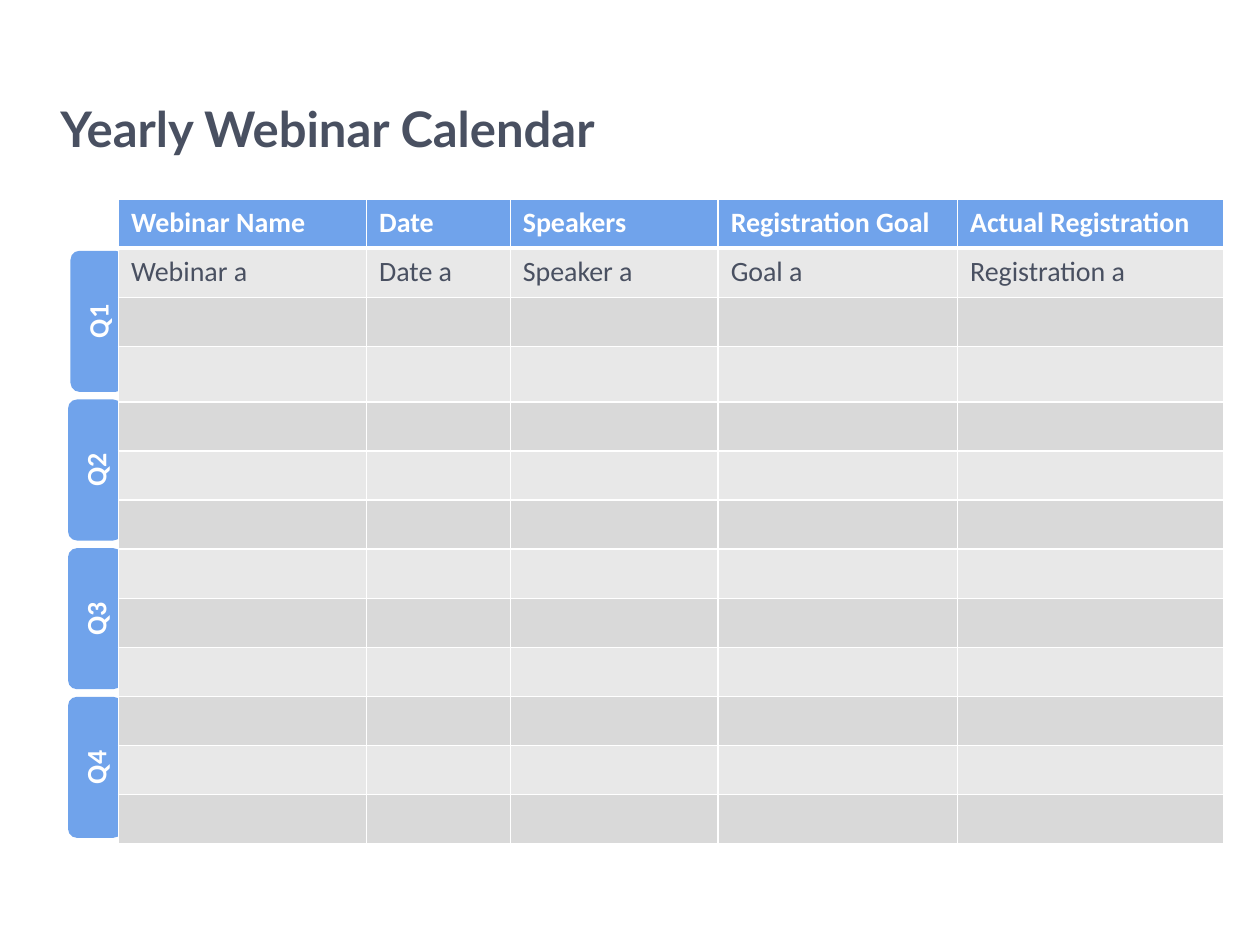
from dataclasses import dataclass

from lxml import etree
from pptx import Presentation
from pptx.dml.color import RGBColor
from pptx.enum.shapes import MSO_SHAPE
from pptx.enum.text import MSO_ANCHOR, MSO_AUTO_SIZE, PP_ALIGN
from pptx.oxml.ns import qn
from pptx.util import Inches, Pt

ROUNDED = MSO_SHAPE.ROUNDED_RECTANGLE
MIDDLE = MSO_ANCHOR.MIDDLE
NO_AUTOFIT = MSO_AUTO_SIZE.NONE
LEFT, CENTER = PP_ALIGN.LEFT, PP_ALIGN.CENTER

TITLE = "Yearly Webinar Calendar"
QUARTERS = ["Q1", "Q2", "Q3", "Q4"]
# Heading, sample entry, column width in inches
COLUMNS = [
    ("Webinar Name", "Webinar a", 1.97),
    ("Date", "Date a", 1.14),
    ("Speakers", "Speaker a", 1.65),
    ("Registration Goal", "Goal a", 1.9),
    ("Actual Registration", "Registration a", 2.11),
]
ROW_COUNT = 13
ROW_HEIGHT = 0.39
TALL_ROWS = {3: 0.44}
TABLE_LEFT, TABLE_TOP = 0.94, 1.58
TAB_TOP, TAB_STEP = 1.99, 1.18
TAB_WIDTH, TAB_HEIGHT = 0.43, 1.12
TAB_LEFT, FIRST_TAB_LEFT = 0.54, 0.56


@dataclass(frozen=True)
class Theme:
    title_font: str = "Lato"
    body_font: str = "Calibri"
    title_size: int = 28
    body_size: int = 16
    dark: str = "495061"
    blue: str = "70A3EB"
    white: str = "FFFFFF"
    bands: tuple = ("D9D9D9", "E8E8E8")


THEME = Theme()


def style_font(font, name, size, color, bold):
    font.name = name
    font.size = Pt(size)
    font.bold = bold
    font.color.rgb = RGBColor.from_string(color)


def fill_solid(target, color):
    target.fill.solid()
    target.fill.fore_color.rgb = RGBColor.from_string(color)


def set_borders(cell, bottom_width):
    """Draw white cell edges; they go before the fill in the cell's XML."""
    properties = cell._tc.get_or_add_tcPr()
    widths = {"lnL": 1, "lnR": 1, "lnT": 1, "lnB": bottom_width}
    for position, (tag, width) in enumerate(widths.items()):
        line = etree.Element(qn(f"a:{tag}"), w=str(Pt(width)))
        solid = etree.SubElement(line, qn("a:solidFill"))
        etree.SubElement(solid, qn("a:srgbClr"), val=THEME.white)
        properties.insert(position, line)


def add_title(slide):
    title = slide.shapes.title
    title.left, title.top = Inches(0.38), Inches(0.67)
    title.width, title.height = Inches(9), Inches(0.69)
    frame = title.text_frame
    frame.text = TITLE
    frame.auto_size = NO_AUTOFIT
    frame.vertical_anchor = MIDDLE
    paragraph = frame.paragraphs[0]
    paragraph.alignment = LEFT
    style_font(paragraph.font, THEME.title_font, THEME.title_size, THEME.dark, True)


def add_quarter_tab(slide, index, label):
    left = TAB_LEFT if index else FIRST_TAB_LEFT
    tab = slide.shapes.add_shape(
        ROUNDED, Inches(left), Inches(TAB_TOP + index * TAB_STEP),
        Inches(TAB_WIDTH), Inches(TAB_HEIGHT))
    tab.shadow.inherit = False
    fill_solid(tab, THEME.blue)
    tab.line.fill.background()
    frame = tab.text_frame
    frame.text = label
    frame.vertical_anchor = MIDDLE
    frame._txBody.bodyPr.set("vert", "vert270")
    paragraph = frame.paragraphs[0]
    paragraph.alignment = CENTER
    style_font(paragraph.font, THEME.body_font, THEME.body_size, THEME.white, True)


def add_calendar(slide):
    headings, samples, widths = zip(*COLUMNS)
    heights = [TALL_ROWS.get(row, ROW_HEIGHT) for row in range(ROW_COUNT)]
    table = slide.shapes.add_table(
        ROW_COUNT, len(COLUMNS), Inches(TABLE_LEFT), Inches(TABLE_TOP),
        Inches(sum(widths)), Inches(sum(heights))).table
    for column, width in zip(table.columns, widths):
        column.width = Inches(width)

    text_rows = [headings, samples]
    for row_index, row in enumerate(table.rows):
        row.height = Inches(heights[row_index])
        is_header = row_index == 0
        for column_index, cell in enumerate(row.cells):
            fill_solid(cell, THEME.blue if is_header else THEME.bands[row_index % 2])
            set_borders(cell, 3 if is_header or False else 1)
            if row_index < len(text_rows):
                cell.text = text_rows[row_index][column_index]
            else:
                # Slim margins keep empty rows at their set height
                cell.margin_top = cell.margin_bottom = Inches(0.02)
            style_font(cell.text_frame.paragraphs[0].font, THEME.body_font,
                       THEME.body_size, THEME.white if is_header else THEME.dark,
                       is_header)


def main():
    presentation = Presentation()
    presentation.slide_width, presentation.slide_height = Inches(10), Inches(7.5)
    slide = presentation.slides.add_slide(presentation.slide_layouts[5])
    add_title(slide)
    for index, label in enumerate(QUARTERS):
        add_quarter_tab(slide, index, label)
    add_calendar(slide)
    presentation.save("out.pptx")


if __name__ == "__main__":
    main()
